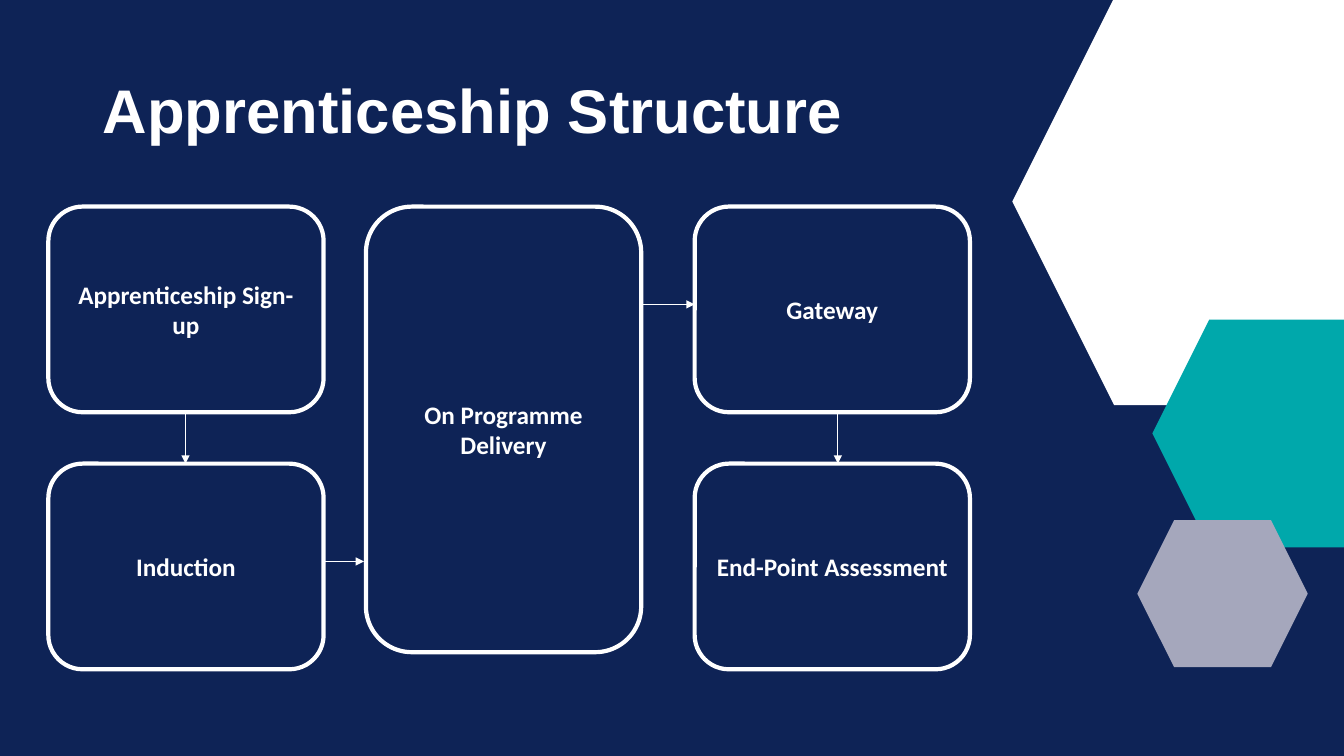
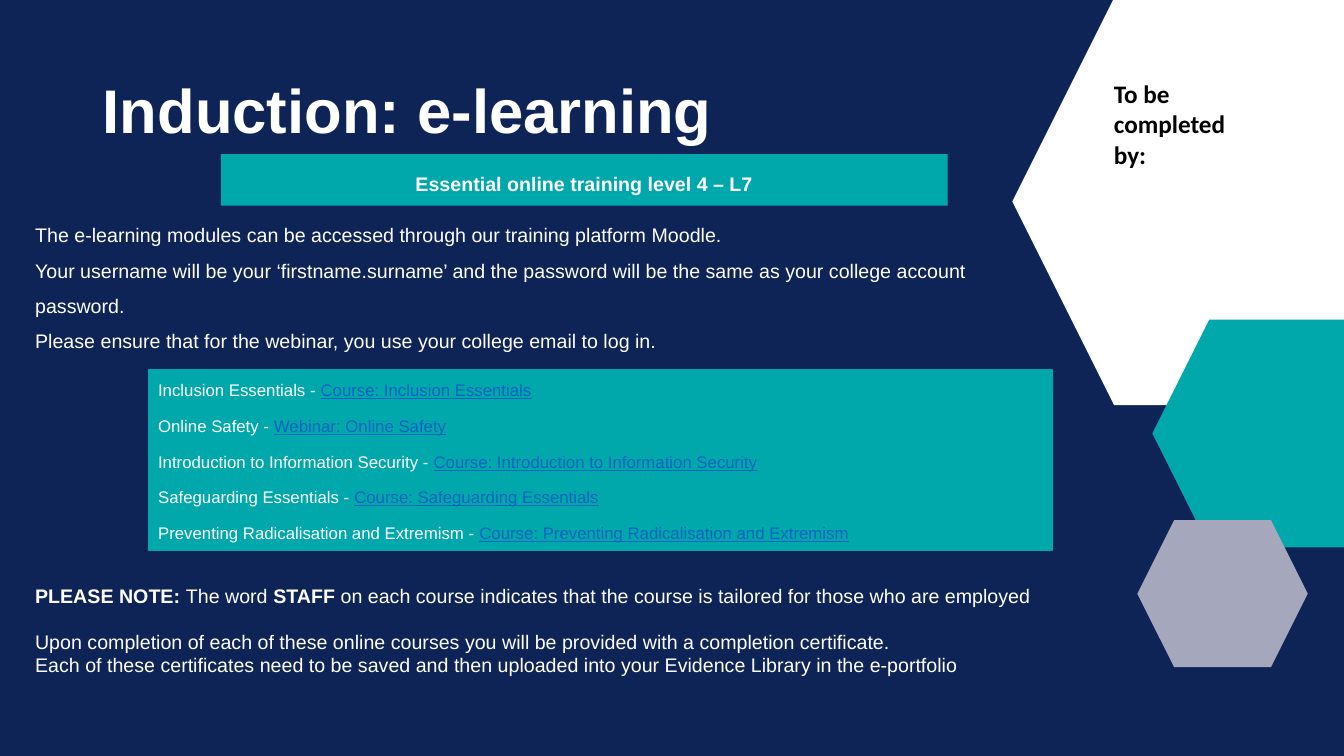
from lxml import etree
from pptx import Presentation
from pptx.dml.color import RGBColor
from pptx.enum.shapes import MSO_CONNECTOR, MSO_SHAPE
from pptx.enum.text import MSO_ANCHOR, MSO_AUTO_SIZE, PP_ALIGN
from pptx.oxml.ns import qn
from pptx.util import Inches, Pt

RECT, ROUND, HEXAGON = MSO_SHAPE.RECTANGLE, MSO_SHAPE.ROUNDED_RECTANGLE, MSO_SHAPE.HEXAGON
LEFT, CENTER = PP_ALIGN.LEFT, PP_ALIGN.CENTER
TOP, MIDDLE = MSO_ANCHOR.TOP, MSO_ANCHOR.MIDDLE

COLORS = {
    "navy": "0E2356", "white": "FFFFFF", "teal": "00A8AB",
    "grey": "A5A7BC", "link": "0563C1", "black": "000000",
}

# Shared decoration: left, top, width, height, colour
HEXAGONS = [
    (10.04, -0.02, 4.48, 4.04, "white"),
    (11.43, 3.17, 2.54, 2.26, "teal"),
    (11.28, 5.16, 1.69, 1.46, "grey"),
]

# Slide 1: stages as text, column, row, height
COLUMNS, ROWS = (0.48, 3.63, 6.89), (2.05, 4.6)
STAGE_W, STAGE_H = 2.73, 2.04
STAGES = [
    ("On Programme Delivery", 1, 0, 4.42),
    ("Apprenticeship Sign-up", 0, 0, STAGE_H),
    ("Induction", 0, 1, STAGE_H),
    ("Gateway", 2, 0, STAGE_H),
    ("End-Point Assessment", 2, 1, STAGE_H),
]
ARROWS = [
    (1.84, 4.08, 1.84, 4.6), (3.21, 5.57, 3.61, 5.57),
    (8.31, 4.08, 8.31, 4.6), (6.34, 3.02, 6.89, 3.02),
]

# Slide 2: a paragraph is a list of (text, style) runs
ACCESS = [
    "The e-learning modules can be accessed through our training platform Moodle.",
    "Your username will be your ‘firstname.surname’ and the password will be "
    "the same as your college account password.",
    "Please ensure that for the webinar, you use your college email to log in.",
]
COURSES = [
    ("Inclusion Essentials", "Course"),
    ("Online Safety", "Webinar"),
    ("Introduction to Information Security", "Course"),
    ("Safeguarding Essentials", "Course"),
    ("Preventing Radicalisation and Extremism", "Course"),
]
NOTES = [
    [("PLEASE NOTE: ", "bold"), ("The word ", ""), ("STAFF ", "bold"),
     ("on each course indicates that the course is tailored for those who are employed", "")],
    [("Upon completion of each of these online courses you will be provided "
      "with a completion certificate.", "")],
    [("Each of these certificates need to be saved and then uploaded into your "
      "Evidence Library in the e-portfolio", "")],
]


def rgb(name):
    return RGBColor.from_string(COLORS[name])


def box(place):
    return [Inches(v) for v in place]


def add_shape(slide, kind, place, fill=None, line=None, width=0.75):
    sp = slide.shapes.add_shape(kind, *box(place))
    sp.shadow.inherit = False
    if fill:
        sp.fill.solid()
        sp.fill.fore_color.rgb = rgb(fill)
    else:
        sp.fill.background()
    if line:
        sp.line.color.rgb = rgb(line)
        sp.line.width = Pt(width)
    else:
        sp.line.fill.background()
    return sp


def write(sp, paragraphs, size, font="Arial", color="white", align=LEFT,
          anchor=TOP, spacing=1.0, after=0):
    tf = sp.text_frame
    tf.word_wrap = True
    tf.auto_size = MSO_AUTO_SIZE.NONE
    tf.vertical_anchor = anchor
    for i, runs in enumerate(paragraphs):
        p = tf.add_paragraph() if i else tf.paragraphs[0]
        p.alignment = align
        p.line_spacing = spacing
        p.space_after = Pt(after)
        for text, style in runs:
            r = p.add_run()
            r.text = text
            r.font.name = font
            r.font.size = Pt(size)
            r.font.bold = style == "bold"
            r.font.underline = style == "link"
            r.font.color.rgb = rgb("link" if style == "link" else color)
    return tf


def add_text(slide, place, paragraphs, size, **style):
    return write(slide.shapes.add_textbox(*box(place)), paragraphs, size, **style)


def add_arrow(slide, points):
    line = slide.shapes.add_connector(MSO_CONNECTOR.STRAIGHT, *box(points))
    line.line.color.rgb = rgb("white")
    line.line.width = Pt(0.5)
    etree.SubElement(line.line._get_or_add_ln(), qn("a:tailEnd"), type="triangle")
    etree.SubElement(line._element.spPr, qn("a:effectLst"))


def add_slide(prs, title):
    slide = prs.slides.add_slide(prs.slide_layouts[5])
    sp = slide.shapes.title
    sp.left, sp.top, sp.width, sp.height = box((0.92, 0.4, 11.5, 1.45))
    write(sp, [[(title, "bold")]], 44, anchor=MIDDLE, spacing=0.9)
    return slide


def decorate_layout(prs, slide):
    """Put the background and hexagons behind the layout's title."""
    prs.slide_master.background.fill.solid()
    prs.slide_master.background.fill.fore_color.rgb = rgb("navy")
    title, *footers = slide.slide_layout.placeholders
    for footer in footers:
        footer._element.getparent().remove(footer._element)
    for *place, color in HEXAGONS:
        hexagon = add_shape(slide, HEXAGON, place, color)
        title._element.addprevious(hexagon._element)


def build_structure(slide):
    for text, column, row, height in STAGES:
        place = (COLUMNS[column], ROWS[row], STAGE_W, height)
        sp = add_shape(slide, ROUND, place, line="white", width=3)
        write(sp, [[(text, "bold")]], 18, font="Calibri", align=CENTER, anchor=MIDDLE)
    for points in ARROWS:
        add_arrow(slide, points)


def build_elearning(slide):
    # Heading band
    band = add_shape(slide, RECT, (2.19, 1.53, 7.21, 0.51), "teal")
    tf = write(band, [[("Essential online training level 4 – L7", "bold")]], 14,
               align=CENTER, anchor=MIDDLE)
    tf.margin_top = Inches(0.13)

    # Access details and notes
    add_text(slide, (0.25, 2.05, 9.79, 1.47), [[(text, "")] for text in ACCESS],
             14, spacing=1.5)
    notes = add_text(slide, (0.25, 5.74, 10.34, 1.04), NOTES, 14)
    notes.paragraphs[1].space_before = Pt(16)

    # Course list
    panel = add_shape(slide, RECT, (1.47, 3.67, 8.97, 1.79), "teal", "teal")
    courses = [[(f"{name} - ", ""), (f"{kind}: {name}", "link")] for name, kind in COURSES]
    write(panel, courses, 12, spacing=1.25, after=7.5)

    # Deadline
    add_text(slide, (10.95, 0.73, 1.54, 1.01), [[("To be completed by:", "bold")]],
             18, font="Calibri", color="black")


def main():
    prs = Presentation()
    prs.slide_width, prs.slide_height = Inches(13.33), Inches(7.5)
    structure = add_slide(prs, "Apprenticeship Structure")
    decorate_layout(prs, structure)
    build_structure(structure)
    build_elearning(add_slide(prs, "Induction: e-learning"))
    prs.save("out.pptx")


if __name__ == "__main__":
    main()
